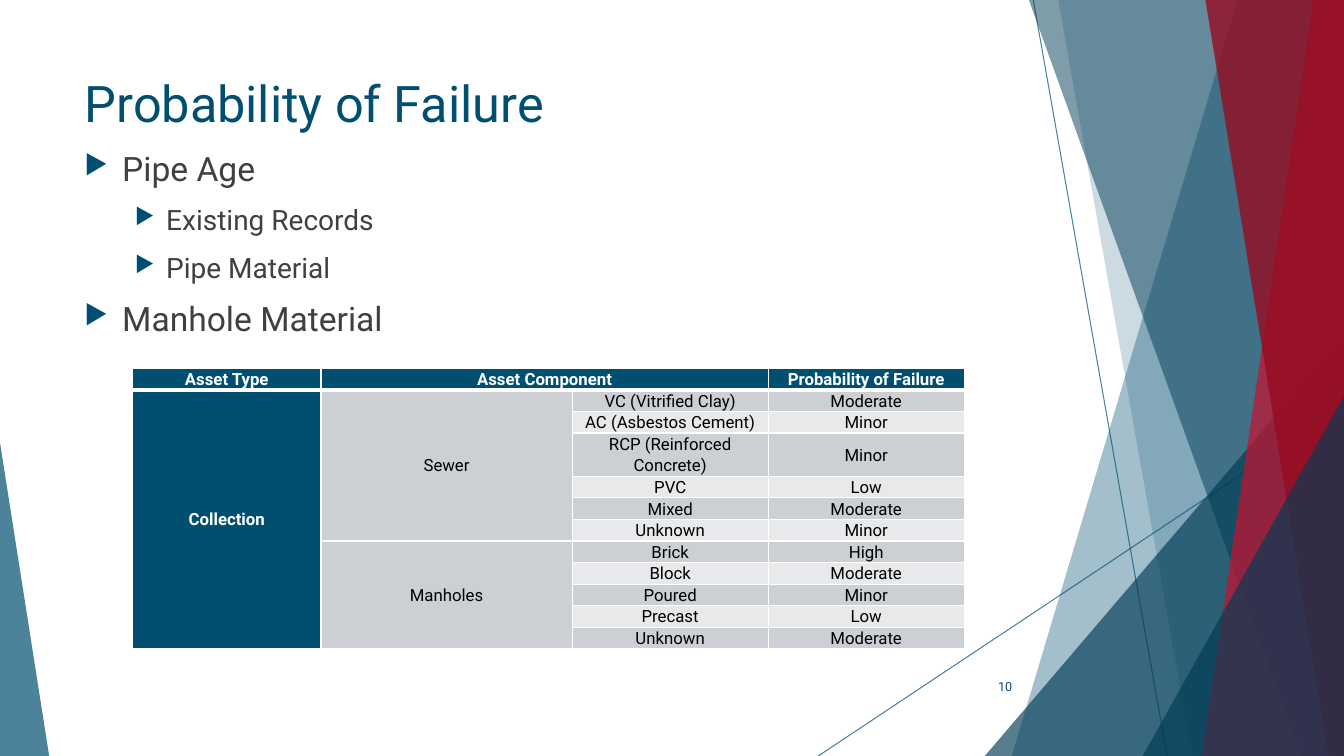
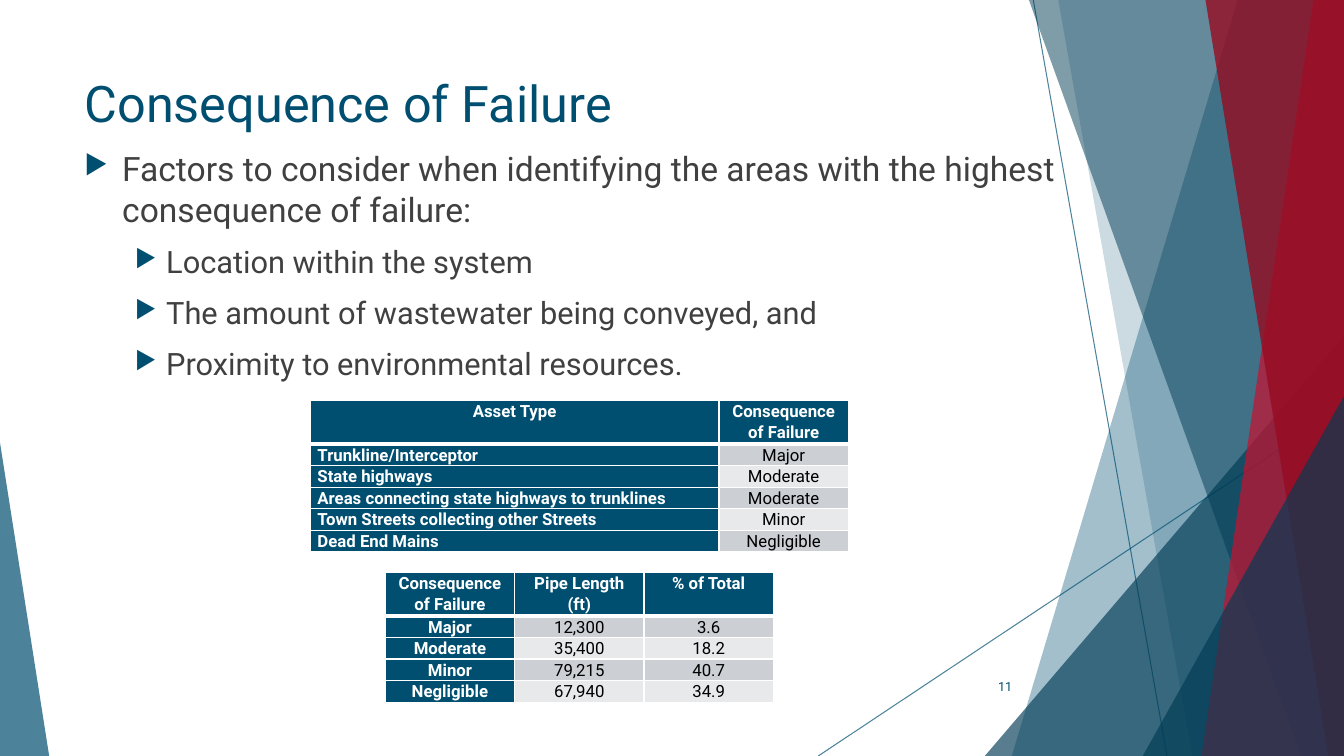
from pptx import Presentation
from pptx.dml.color import RGBColor
from pptx.enum.shapes import MSO_CONNECTOR, MSO_SHAPE
from pptx.enum.text import MSO_ANCHOR, PP_ALIGN
from pptx.oxml import parse_xml
from pptx.oxml.ns import nsdecls
from pptx.util import Cm, Pt

WIDE, HIGH = 33.87, 19.05
LINE = 0.53  # height of one line of table text
FONT = "Roboto"
HUES = {
    "blue": "004F71", "navy": "003B55", "red": "C8102E", "wine": "960C22",
    "text": "404040", "black": "000000", "white": "FFFFFF",
    "odd": "CCD0D5", "even": "E7E9EB",
}
# Backdrop, back to front: top x and bottom x of a band,
# or left, top, width and apex (0 left, 1 right) of a triangle
SHARDS = [
    ("band", (31.19, 25.5), "blue", 36),
    ("band", (26.67, 30.05), "blue", 20),
    ("peak", (24.82, 8.46, 9.05, 1), "navy", 66),
    ("band", (25.93, 32.79), "navy", 50),
    ("band", (33.1, 30.28), "red", 70),
    ("band", (30.38, 33.48), "wine", 80),
    ("peak", (28.8, 9.98, 5.07, 1), "navy", 66),
    ("peak", (0, 11.15, 1.24, 0), "blue", 70),
]


def node(tag, attrs="", inner=""):
    return parse_xml(f"<a:{tag} {nsdecls('a')} {attrs}>{inner}</a:{tag}>")


def solid(hue):
    return f'<a:srgbClr val="{HUES[hue]}"/>'


class Deck:
    def __init__(self):
        self.prs = Presentation()
        self.prs.slide_width, self.prs.slide_height = Cm(WIDE), Cm(HIGH)
        self.slide = None

    def page(self, title, number):
        self.slide = self.prs.slides.add_slide(self.prs.slide_layouts[5])
        self.backdrop()
        # Title
        head = self.slide.shapes.title
        head.left, head.top, head.width, head.height = map(Cm, (1.88, 1.7, 23.88, 2.29))
        frame = head.text_frame
        frame.vertical_anchor = MSO_ANCHOR.TOP
        self.run(frame.paragraphs[0], title, 36, "blue")
        frame.paragraphs[0].alignment = PP_ALIGN.LEFT
        # Page number
        frame = self.box(23.85, 16.79, 1.91, 1.02)
        frame.vertical_anchor = MSO_ANCHOR.MIDDLE
        frame.paragraphs[0].alignment = PP_ALIGN.RIGHT
        self.run(frame.paragraphs[0], str(number), 9, "blue")

    def backdrop(self):
        self.line(26.04, 0, 29.41, HIGH)
        self.line(WIDE, 10.24, 20.62, HIGH)
        for kind, place, hue, alpha in SHARDS:
            shape = getattr(self, kind)(*place)
            shape.shadow.inherit = False
            shape.fill.solid()
            shape.fill.fore_color.rgb = RGBColor.from_string(HUES[hue])
            shape.line.fill.background()
            self.fade(shape, alpha)

    def band(self, top, foot):
        spots = [(WIDE, 0), (WIDE, HIGH), (foot, HIGH)]
        path = self.slide.shapes.build_freeform(Cm(top), Cm(0))
        path.add_line_segments([(Cm(x), Cm(y)) for x, y in spots])
        return path.convert_to_shape()

    def peak(self, left, top, width, apex):
        shape = self.slide.shapes.add_shape(
            MSO_SHAPE.ISOSCELES_TRIANGLE, Cm(left), Cm(top), Cm(width), Cm(HIGH - top))
        shape.adjustments[0] = apex
        return shape

    def line(self, *ends):
        line = self.slide.shapes.add_connector(MSO_CONNECTOR.STRAIGHT, *map(Cm, ends))
        line.line.width = Pt(0.75)
        line.line.color.rgb = RGBColor.from_string(HUES["blue"])
        self.fade(line, 70)
        line._element.spPr.append(node("effectLst"))

    def fade(self, shape, alpha):
        for color in shape._element.xpath(".//a:srgbClr"):
            color.append(node("alpha", f'val="{alpha * 1000}"'))

    def box(self, *place):
        frame = self.slide.shapes.add_textbox(*map(Cm, place)).text_frame
        frame.word_wrap = True
        return frame

    def run(self, para, text, size, hue, bold=False):
        run = para.add_run()
        run.text = text
        font = run.font
        font.name, font.size, font.bold = FONT, Pt(size), bold
        font.color.rgb = RGBColor.from_string(HUES[hue])

    def bullets(self, items, small):
        frame = self.box(1.88, 3.61, 25.17, 14.76)
        for i, (level, text) in enumerate(items):
            para = frame.add_paragraph() if i else frame.paragraphs[0]
            para.level = level
            para.space_before = Pt(10)
            left, hang = ((0.95, 0.95), (2.06, 0.79))[level]
            props = para._p.get_or_add_pPr()
            props.set("marL", str(Cm(left)))
            props.set("indent", str(-Cm(hang)))
            props.append(node("buClr", inner=solid("blue")))
            props.append(node("buSzPct", 'val="80000"'))
            props.append(node("buChar", 'char="▶"'))
            self.run(para, text, small if level else 24, "text")

    def table(self, left, top, widths, rows, tall=(), spans=(), side=PP_ALIGN.CENTER):
        """tall: rows with two lines; spans: merged corners; side: first column."""
        high = [LINE * (2 if r in tall else 1) for r in range(len(rows))]
        grid = self.slide.shapes.add_table(
            len(rows), len(widths), Cm(left), Cm(top), Cm(sum(widths)), Cm(sum(high))).table
        for col, width in zip(grid.columns, widths):
            col.width = Cm(width)
        for r, row in enumerate(rows):
            grid.rows[r].height = Cm(high[r])
            for c, text in enumerate(row):
                self.cell(grid.cell(r, c), text, r, c, side)
        for r, c, end, last in spans:
            grid.cell(r, c).merge(grid.cell(end, last))

    def cell(self, cell, text, r, c, side):
        dark = r == 0 or c == 0
        cell.margin_left = cell.margin_right = Cm(0.18)
        cell.margin_top = cell.margin_bottom = 0
        cell.vertical_anchor = MSO_ANCHOR.MIDDLE if r else MSO_ANCHOR.TOP
        cell.fill.solid()
        hue = "blue" if dark else "odd" if r % 2 else "even"
        cell.fill.fore_color.rgb = RGBColor.from_string(HUES[hue])
        # White rules, thicker under the header
        props = cell._tc.get_or_add_tcPr()
        rules = {"lnL": 1, "lnR": 1, "lnT": 3 if r == 1 else 1, "lnB": 1 if r else 3}
        for i, (tag, width) in enumerate(rules.items()):
            fill = f"<a:solidFill>{solid('white')}</a:solidFill>"
            props.insert(i, node(tag, f'w="{Pt(width)}"', fill))
        if text:
            para = cell.text_frame.paragraphs[0]
            para.alignment = side if r and c == 0 else PP_ALIGN.CENTER
            para.line_spacing = 1.07
            self.run(para, text, 12, "white" if dark else "black", dark)


def main():
    deck = Deck()

    # Probability
    deck.page("Probability of Failure", 10)
    deck.bullets([
        (0, "Pipe Age"), (1, "Existing Records"), (1, "Pipe Material"),
        (0, "Manhole Material"),
    ], 20)
    deck.table(3.34, 9.28, (4.75, 6.33, 4.94, 4.94), [
        ("Asset Type", "Asset Component", "", "Probability of Failure"),
        ("Collection", "Sewer", "VC (Vitrified Clay)", "Moderate"),
        ("", "", "AC (Asbestos Cement)", "Minor"),
        ("", "", "RCP (Reinforced Concrete)", "Minor"),
        ("", "", "PVC", "Low"),
        ("", "", "Mixed", "Moderate"),
        ("", "", "Unknown", "Minor"),
        ("", "Manholes", "Brick", "High"),
        ("", "", "Block", "Moderate"),
        ("", "", "Poured", "Minor"),
        ("", "", "Precast", "Low"),
        ("", "", "Unknown", "Moderate"),
    ], tall=(3,), spans=((0, 1, 0, 2), (1, 0, 11, 0), (1, 1, 6, 1), (7, 1, 11, 1)))

    # Consequence
    deck.page("Consequence of Failure", 11)
    deck.bullets([
        (0, "Factors to consider when identifying the areas with the highest "
            "consequence of failure:"),
        (1, "Location within the system"),
        (1, "The amount of wastewater being conveyed, and"),
        (1, "Proximity to environmental resources."),
    ], 22)
    deck.table(7.82, 10.1, (10.3, 3.26), [
        ("Asset Type", "Consequence of Failure"),
        ("Trunkline/Interceptor", "Major"),
        ("State highways", "Moderate"),
        ("Areas connecting state highways to trunklines", "Moderate"),
        ("Town Streets collecting other Streets", "Minor"),
        ("Dead End Mains", "Negligible"),
    ], tall=(0,), side=PP_ALIGN.LEFT)
    deck.table(9.71, 14.43, (3.26,) * 3, [
        ("Consequence of Failure", "Pipe Length (ft)", "% of Total"),
        ("Major", "12,300", "3.6"),
        ("Moderate", "35,400", "18.2"),
        ("Minor", "79,215", "40.7"),
        ("Negligible", "67,940", "34.9"),
    ], tall=(0,))

    deck.prs.save("out.pptx")


if __name__ == "__main__":
    main()
